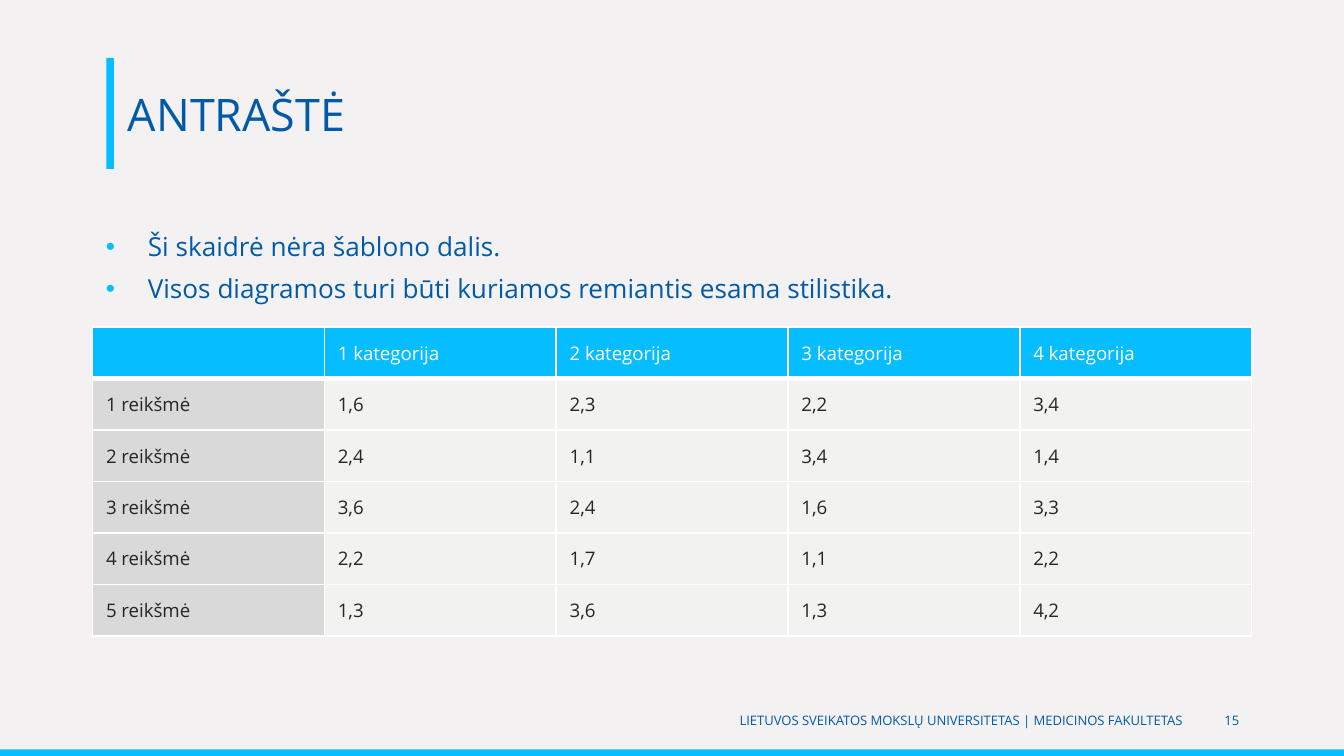
from pptx import Presentation
from pptx.dml.color import RGBColor
from pptx.enum import shapes, text
from pptx.oxml import xmlchemy
from pptx.util import Pt
from lxml import etree

COLORS = {
    "background": "F3F1F2",
    "accent": "06BDFF",
    "navy": "015AA7",
    "footer": "015AA8",
    "label": "D9D9D9",
    "value": "F2F2F1",
    "ink": "262626",
    "white": "FFFFFF",
}
FONT = "Open Sans"
WIDTH, HEIGHT = 720, 405
HEADERS = [""] + [f"{number} kategorija" for number in range(1, 5)]
VALUES = [
    ["1,6", "2,3", "2,2", "3,4"],
    ["2,4", "1,1", "3,4", "1,4"],
    ["3,6", "2,4", "1,6", "3,3"],
    ["2,2", "1,7", "1,1", "2,2"],
    ["1,3", "3,6", "1,3", "4,2"],
]
BULLETS = [
    "Ši skaidrė nėra šablono dalis.",
    "Visos diagramos turi būti kuriamos remiantis esama stilistika.",
]


def rgb(name):
    return RGBColor.from_string(COLORS[name])


def add_child(parent, tag, **attributes):
    return etree.SubElement(parent, xmlchemy.qn(tag), attributes)


def add_bullet(paragraph):
    properties = paragraph._p.get_or_add_pPr()
    properties.set("marL", str(Pt(22.5)))
    properties.set("indent", str(-Pt(22.5)))
    color = add_child(properties, "a:buClr")
    add_child(color, "a:srgbClr", val=COLORS["accent"])
    add_child(properties, "a:buFont", typeface="Arial")
    add_child(properties, "a:buChar", char="•")


def write(frame, lines, size, color, align=text.PP_ALIGN.LEFT,
          anchor=text.MSO_ANCHOR.MIDDLE, bullets=False, spacing=1, gap=0):
    frame.word_wrap = True
    frame.auto_size = text.MSO_AUTO_SIZE.NONE
    frame.vertical_anchor = anchor
    for index, line in enumerate(lines):
        paragraph = frame.add_paragraph() if index else frame.paragraphs[0]
        if bullets:
            add_bullet(paragraph)
        paragraph.alignment = align
        paragraph.line_spacing = spacing
        paragraph.space_before = Pt(gap if index else 0)
        run = paragraph.add_run()
        run.text = line
        run.font.name = FONT
        run.font.size = Pt(size)
        run.font.color.rgb = rgb(color)


def add_bar(slide, left, top, width, height):
    bar = slide.shapes.add_shape(
        shapes.MSO_SHAPE.RECTANGLE, Pt(left), Pt(top), Pt(width), Pt(height))
    bar.shadow.inherit = False
    bar.fill.solid()
    bar.fill.fore_color.rgb = rgb("accent")
    bar.line.fill.background()


def add_title(slide, heading):
    title = slide.shapes.title
    title.left, title.top = Pt(61.3), Pt(31)
    title.width, title.height = Pt(609), Pt(59.5)
    write(title.text_frame, [heading], 24, "navy")


def add_text(slide, left, top, width, height, lines, **style):
    box = slide.shapes.add_textbox(Pt(left), Pt(top), Pt(width), Pt(height))
    write(box.text_frame, lines, **style)


def set_borders(cell, top=1, bottom=1):
    properties = cell._tc.get_or_add_tcPr()
    for side, width in (("L", 1), ("R", 1), ("T", top), ("B", bottom)):
        border = add_child(properties, f"a:ln{side}", w=str(Pt(width)))
        fill = add_child(border, "a:solidFill")
        add_child(fill, "a:srgbClr", val=COLORS["white"])


def format_cell(cell, content, fill, color, **borders):
    set_borders(cell, **borders)
    cell.fill.solid()
    cell.fill.fore_color.rgb = rgb(fill)
    cell.vertical_anchor = text.MSO_ANCHOR.MIDDLE
    if not content:
        cell.margin_top = cell.margin_bottom = 0
        return
    run = cell.text_frame.paragraphs[0].add_run()
    run.text = content
    run.font.name = FONT
    run.font.size = Pt(10)
    run.font.bold = False
    run.font.color.rgb = rgb(color)


def add_values_table(slide):
    column_width, row_height = 124.2, 27.6
    rows, columns = len(VALUES) + 1, len(HEADERS)
    table = slide.shapes.add_table(
        rows, columns, Pt(49.6), Pt(175.2),
        Pt(column_width * columns), Pt(row_height * rows)).table
    for column in table.columns:
        column.width = Pt(column_width)
    for row in table.rows:
        row.height = Pt(row_height)
    for index, header in enumerate(HEADERS):
        format_cell(table.cell(0, index), header, "accent", "white", bottom=3)
    for number, values in enumerate(VALUES, 1):
        for index, content in enumerate([f"{number} reikšmė"] + values):
            format_cell(table.cell(number, index), content,
                        "value" if index else "label", "ink",
                        top=3 if number == 1 else 1)


def main():
    deck = Presentation()
    deck.slide_width, deck.slide_height = Pt(WIDTH), Pt(HEIGHT)
    slide = deck.slides.add_slide(deck.slide_layouts[5])
    slide.background.fill.solid()
    slide.background.fill.fore_color.rgb = rgb("background")

    add_bar(slide, 0, 401.5, WIDTH, 3.5)
    add_bar(slide, 57, 31, 4, 59.5)
    add_title(slide, "ANTRAŠTĖ")
    add_text(slide, 49.6, 121.7, 621, 49, BULLETS, size=14, color="navy",
             anchor=text.MSO_ANCHOR.TOP, bullets=True, spacing=0.9, gap=7.5)
    add_values_table(slide)
    footer = {"size": 7, "color": "footer", "align": text.PP_ALIGN.RIGHT}
    add_text(slide, 121, 375.3, 519.6, 21.6,
             ["LIETUVOS SVEIKATOS MOKSLŲ UNIVERSITETAS | MEDICINOS FAKULTETAS"],
             **footer)
    add_text(slide, 645, 375.3, 26, 21.6, ["15"], **footer)
    deck.save("out.pptx")


if __name__ == "__main__":
    main()
